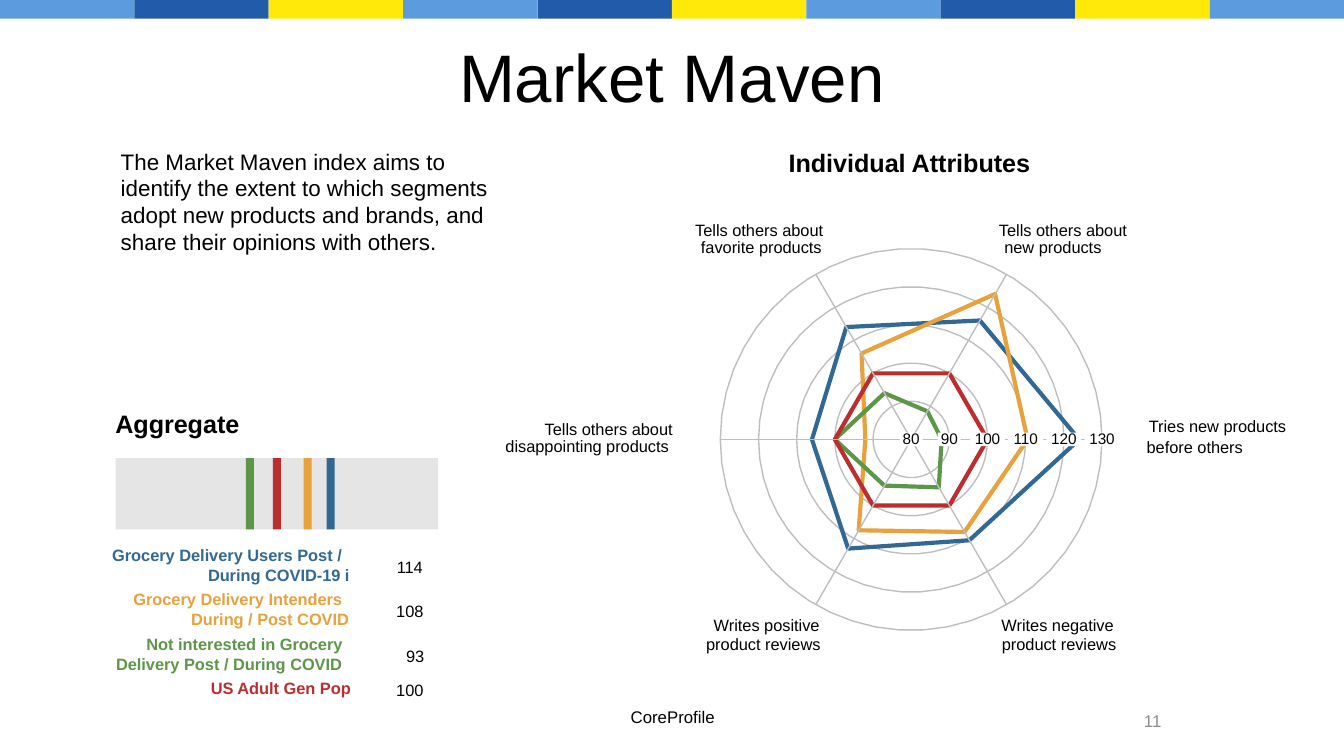
from math import cos, radians, sin

from lxml import etree
from pptx import Presentation
from pptx.dml.color import RGBColor
from pptx.enum.shapes import MSO_CONNECTOR, MSO_SHAPE
from pptx.enum.text import MSO_ANCHOR, PP_ALIGN
from pptx.oxml.ns import qn
from pptx.util import Inches, Pt

RECT = MSO_SHAPE.RECTANGLE
STRAIGHT = MSO_CONNECTOR.STRAIGHT
TOP, MIDDLE = MSO_ANCHOR.TOP, MSO_ANCHOR.MIDDLE
LEFT, CENTER, RIGHT = PP_ALIGN.LEFT, PP_ALIGN.CENTER, PP_ALIGN.RIGHT

BLACK, WHITE, GRID, TRACK, MUTED = "000000", "FFFFFF", "BEBEBE", "E5E5E5", "8C8C8C"
STRIPES = ["5B9BDE", "235BAB", "FFE90A"]

INTRO = ("The Market Maven index aims to identify the extent to which segments "
         "adopt new products and brands, and share their opinions with others.")

# text, (left, top, width, height), format
COPY = [
    ("Market Maven", (0.5, 0.23, 9, 0.67), dict(size=36, align=CENTER, anchor=MIDDLE)),
    ("Aggregate", (0.76, 2.99, 1.55, 0.34), dict(size=13.5, bold=True)),
    (INTRO, (0.8, 1.05, 3.19, 1.56), dict(size=12, margin_right=0.2)),
    ("CoreProfile", (4.23, 5.21, 1.55, 0.25), dict(size=9, align=CENTER)),
    ("Individual Attributes", (5.77, 1.05, 2.6, 0.56), dict(size=13.5, bold=True)),
    ("11", (7.46, 5.21, 1.28, 0.3),
     dict(size=9, color=MUTED, align=RIGHT, anchor=MIDDLE)),
]

# Scores run anticlockwise from "Tries new products before others"
SEGMENTS = [
    dict(lines=[("Grocery Delivery Users Post /", 2.02), ("During COVID-19 i", 1.25)],
         color="326994", index=114, scores=[124, 116, 114, 106, 113, 110.5]),
    dict(lines=[("Grocery Delivery Intenders", 1.86), ("During / Post COVID", 1.38)],
         color="E7A13D", index=108, scores=[110.5, 124, 106, 92, 107.5, 108]),
    dict(lines=[("Not interested in Grocery", 1.76), ("Delivery Post / During COVID", 1.99)],
         color="5D9648", index=93, scores=[88, 88.5, 94, 100, 94, 94.5]),
    dict(lines=[("US Adult Gen Pop", 1.22)],
         color="BC2D30", index=100, scores=[100] * 6),
]

# line, left, top, width
ATTRIBUTE_LINES = [
    ("Tries new products", 8.48, 3.12, 1.16), ("before others", 8.48, 3.28, 0.82),
    ("Tells others about", 7.36, 1.66, 1.1), ("new products", 7.42, 1.79, 0.83),
    ("Tells others about", 5.1, 1.66, 1.1), ("favorite products", 5.14, 1.79, 1.05),
    ("Tells others about", 3.98, 3.14, 1.1), ("disappointing products", 3.67, 3.27, 1.4),
    ("Writes positive", 5.25, 4.6, 0.91), ("product reviews", 5.19, 4.74, 0.98),
    ("Writes negative", 7.39, 4.6, 0.96), ("product reviews", 7.39, 4.74, 0.98),
]

HUB_X, HUB_Y = 6.78, 3.27
SCALE = range(80, 131, 10)
INCH_PER_POINT = 1.42 / (SCALE[-1] - SCALE[0])
RING_SIDES = 50
BAR_LEFT, BAR_TOP, BAR_WIDTH, BAR_HEIGHT = 0.86, 3.41, 2.4, 0.53
LEGEND_TOP, LEGEND_RIGHT, INDEX_RIGHT = 4.08, 2.7, 3.17
ROW_STEP, LINE_STEP, LINE_HEIGHT = 0.33, 0.15, 0.12

prs = Presentation()
prs.slide_width = Inches(10)
prs.slide_height = prs.slide_width * 9 // 16
slide = prs.slides.add_slide(prs.slide_layouts[6])
shapes = slide.shapes


def rgb(color):
    return RGBColor.from_string(color)


def write(shape, text, size, color=BLACK, bold=False, align=LEFT, anchor=TOP,
          spacing=None, wrap=True, margin_right=0.1):
    frame = shape.text_frame
    frame.word_wrap = wrap
    frame.vertical_anchor = anchor
    frame.margin_right = Inches(margin_right)
    paragraph = frame.paragraphs[0]
    paragraph.alignment = align
    if spacing:
        paragraph.line_spacing = spacing
    run = paragraph.add_run()
    run.text = text
    for name, value in dict(name="Arial", size=Pt(size), bold=bold).items():
        setattr(run.font, name, value)
    run.font.color.rgb = rgb(color)


def write_tight(shape, text, size, **style):
    """One unwrapped line without insets, centred both ways."""
    frame = shape.text_frame
    frame.margin_left = frame.margin_top = frame.margin_bottom = 0
    write(shape, text, size, align=CENTER, anchor=MIDDLE, spacing=Pt(size),
          wrap=False, margin_right=0, **style)


def textbox(left, top, width, height):
    return shapes.add_textbox(*map(Inches, (left, top, width, height)))


def block(left, top, width, height, color):
    rect = shapes.add_shape(RECT, *map(Inches, (left, top, width, height)))
    rect.shadow.inherit = False
    rect.fill.solid()
    rect.fill.fore_color.rgb = rgb(color)
    rect.line.fill.background()
    return rect


def polar(score, degrees):
    radius = (score - SCALE[0]) * INCH_PER_POINT
    return (Inches(HUB_X + radius * cos(radians(degrees))),
            Inches(HUB_Y - radius * sin(radians(degrees))))


def radar_outline(scores, color, weight):
    """Closed unfilled polygon with its corners spread evenly round the hub."""
    points = [polar(score, 360 * i / len(scores)) for i, score in enumerate(scores)]
    builder = shapes.build_freeform(*points[0])
    builder.add_line_segments(points[1:], close=True)
    outline = builder.convert_to_shape()
    outline.shadow.inherit = False
    outline.fill.background()
    outline.line.color.rgb = rgb(color)
    outline.line.width = Pt(weight)


def spoke(degrees):
    line = shapes.add_connector(STRAIGHT, *polar(SCALE[0], degrees),
                                *polar(SCALE[-1], degrees))
    line.line.color.rgb = rgb(GRID)
    line.line.width = Pt(0.75)
    etree.SubElement(line._element.spPr, qn("a:effectLst"))


for i in range(10):
    block(i, 0, 1, 0.14, STRIPES[i % len(STRIPES)])
for text, place, style in COPY:
    write(textbox(*place), text, **style)

# Aggregate bar and legend
block(BAR_LEFT, BAR_TOP, BAR_WIDTH, BAR_HEIGHT, TRACK)
for row, segment in enumerate(SEGMENTS):
    lines, color, index = segment["lines"], segment["color"], segment["index"]
    block(2.03 + (index - 100) * 0.0286, BAR_TOP, 0.06, BAR_HEIGHT, color)
    row_top = LEGEND_TOP + row * ROW_STEP
    for n, (line, width) in enumerate(lines):
        write_tight(textbox(LEGEND_RIGHT - width, row_top + n * LINE_STEP, width, LINE_HEIGHT),
                    line, 8.8, color=color, bold=True)
    index_width = 0.08 * len(str(index))
    index_top = row_top + 0.03 + (len(lines) - 1) * LINE_STEP / 2
    write_tight(textbox(INDEX_RIGHT - index_width, index_top, index_width, 0.09),
                str(index), 8.8)

# Radar of individual attributes
for ring in reversed(SCALE[1:]):
    radar_outline([ring] * RING_SIDES, GRID, 0.75)
for segment in SEGMENTS:
    radar_outline(segment["scores"], segment["color"], 2.25)
for degrees in range(0, 360, 60):
    spoke(degrees)
for line, left, top, width in ATTRIBUTE_LINES:
    write_tight(textbox(left, top, width, LINE_HEIGHT), line, 8.8)
for tick in SCALE:
    tick_width = 0.17 if tick < 100 else 0.26
    tick_x = HUB_X + (tick - SCALE[0]) * INCH_PER_POINT
    write_tight(block(tick_x - tick_width / 2, 3.22, tick_width, 0.1, WHITE),
                str(tick), 8.2)

prs.save("out.pptx")
